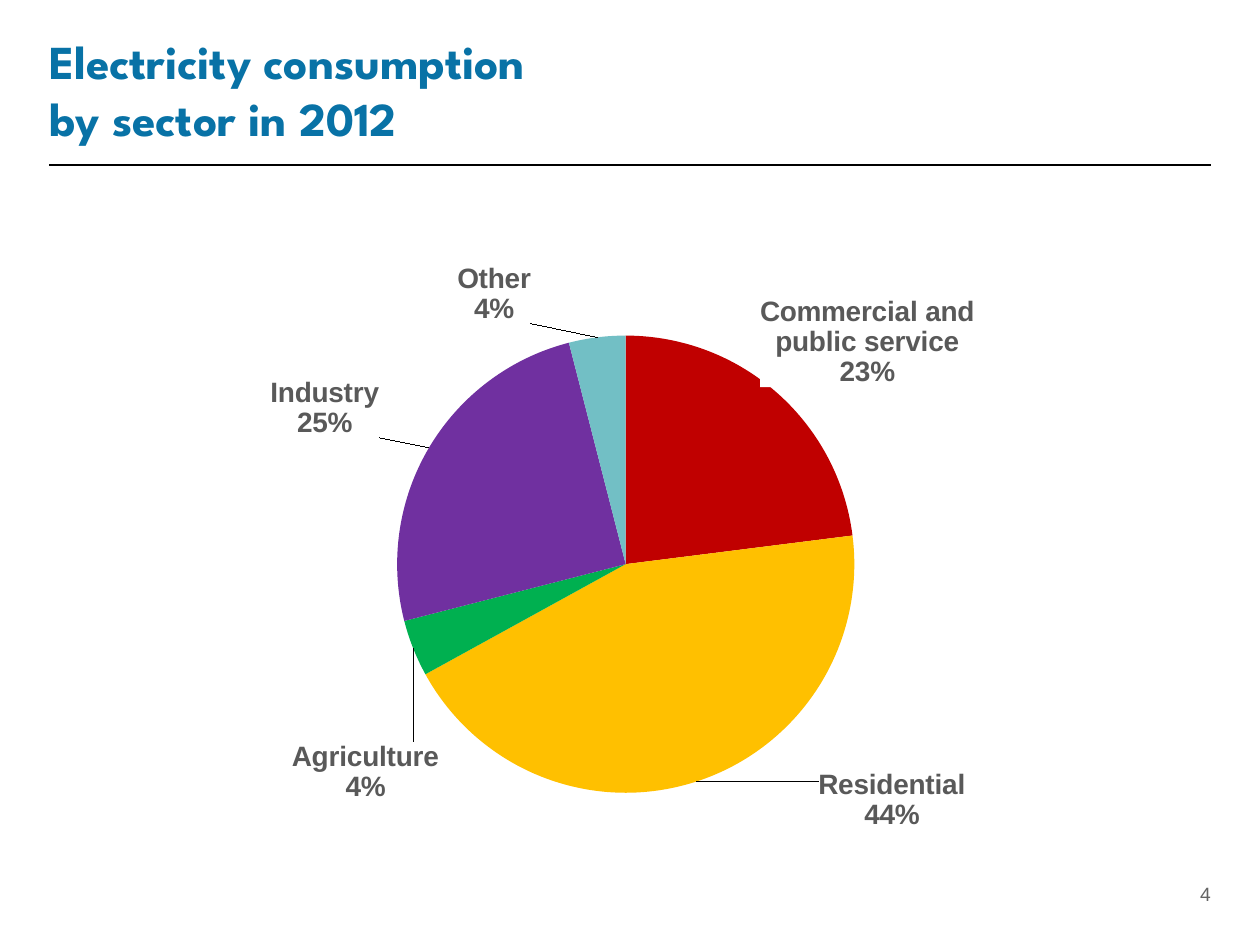
import dataclasses

import lxml.etree
import pptx
import pptx.chart.data
import pptx.dml.color
import pptx.enum.chart
import pptx.enum.shapes
import pptx.enum.text
import pptx.oxml
import pptx.oxml.ns
import pptx.util

Inches = pptx.util.Inches
qn = pptx.oxml.ns.qn


@dataclasses.dataclass(frozen=True)
class Theme:
    """Colours, fonts and type sizes of the slide."""
    width: float = 10
    height: float = 7.5
    margin: float = 0.39
    title_font: str = "League Spartan"
    body_font: str = "Arial"
    title_color: str = "0872A6"
    label_color: str = "595959"
    number_color: str = "646464"
    rule_color: str = "000000"
    paper: str = "FFFFFF"
    title_size: int = 27
    label_size: int = 16
    number_size: int = 11
    chart_size: int = 10


THEME = Theme()
CONTENT_WIDTH = THEME.width - 2 * THEME.margin

SECTORS = [
    ("Commercial and public service", 23, "C00000", (-0.02, 0)),
    ("Residential", 44, "FFC000", (0.11, -0.03)),
    ("Agriculture", 4, "00B050", (0.03, 0.14)),
    ("Industry", 25, "7030A0", (-0.04, -0.01)),
    ("Other", 4, "72BFC5", (-0.06, -0.01)),
]


def rgb(value):
    """Turn a hex string into a colour."""
    return pptx.dml.color.RGBColor.from_string(value)


def style_font(font, name, size, color, bold=False):
    """Set the face, size, colour and weight of a font."""
    font.name = name
    font.size = pptx.util.Pt(size)
    font.color.rgb = rgb(color)
    font.bold = bold


def add_text(s, box, lines, align, anchor, *font):
    """Add a text box without insets, one paragraph per line."""
    sp = s.shapes.add_textbox(*map(Inches, box))
    tf = sp.text_frame
    tf.word_wrap = True
    tf.vertical_anchor = anchor
    tf.margin_left = tf.margin_right = tf.margin_top = tf.margin_bottom = 0
    tf.text = "\n".join(lines)
    for p in tf.paragraphs:
        p.alignment = align
        for r in p.runs:
            style_font(r.font, *font)


def add_rule(s, y):
    """Draw the thin line under the title from margin to margin."""
    line = s.shapes.add_connector(
        pptx.enum.shapes.MSO_CONNECTOR.STRAIGHT, Inches(THEME.margin), Inches(y),
        Inches(THEME.width - THEME.margin), Inches(y))
    line.line.color.rgb = rgb(THEME.rule_color)
    line.line.width = pptx.util.Pt(0.75)
    lxml.etree.SubElement(line._element.spPr, qn("a:effectLst"))


def manual_layout(**values):
    """Build a chart layout element from its named values."""
    layout = lxml.etree.Element(qn("c:layout"))
    manual = lxml.etree.SubElement(layout, qn("c:manualLayout"))
    for name, value in values.items():
        lxml.etree.SubElement(manual, qn(f"c:{name}")).set("val", str(value))
    return layout


def label_slice(series, index, shift):
    """Give a slice a shifted label with its category and percentage."""
    label = series.points[index].data_label
    style_font(label.font, THEME.body_font, THEME.label_size, THEME.label_color, True)
    label.position = pptx.enum.chart.XL_LABEL_POSITION.OUTSIDE_END
    d = series._element.find(qn("c:dLbls")).findall(qn("c:dLbl"))[index]
    for name, value in (("showVal", "0"), ("showCatName", "1"), ("showPercent", "1")):
        d.find(qn(f"c:{name}")).set("val", value)
    lxml.etree.SubElement(d, qn("c:separator")).text = "\n"
    for old in d.findall(qn("c:spPr")):
        d.remove(old)
    d.find(qn("c:idx")).addnext(manual_layout(x=shift[0], y=shift[1]))
    sp_pr = lxml.etree.Element(qn("c:spPr"))
    fill = lxml.etree.SubElement(sp_pr, qn("a:solidFill"))
    lxml.etree.SubElement(fill, qn("a:srgbClr")).set("val", THEME.paper)
    d.find(qn("c:txPr")).addprevious(sp_pr)


def add_pie(s, box, sectors):
    """Add a pie from rows of name, percent, colour and label shift."""
    data = pptx.chart.data.CategoryChartData()
    data.categories = [name for name, *_ in sectors]
    data.add_series("Series 1", [share for _, share, *_ in sectors])
    chart = s.shapes.add_chart(
        pptx.enum.chart.XL_CHART_TYPE.PIE, *map(Inches, box), data).chart
    chart.has_legend = False
    chart.has_title = False
    style_font(chart.font, THEME.body_font, THEME.chart_size, THEME.rule_color)
    plot = chart.plots[0]
    plot.vary_by_categories = True
    series = plot.series[0]
    for i, (_, _, color, shift) in enumerate(sectors):
        slice_format = series.points[i].format
        slice_format.fill.solid()
        slice_format.fill.fore_color.rgb = rgb(color)
        slice_format.line.fill.background()
        label_slice(series, i, shift)
    area = chart._chartSpace.chart.plotArea
    for old in area.findall(qn("c:layout")):
        area.remove(old)
    area.insert(0, manual_layout(layoutTarget="inner", xMode="edge", yMode="edge",
                                 x=0.3, y=0.17, w=0.42, h=0.71))


def main():
    """Build the slide and save it."""
    prs = pptx.Presentation()
    prs.slide_width = Inches(THEME.width)
    prs.slide_height = Inches(THEME.height)
    s = prs.slides.add_slide(prs.slide_layouts[6])
    align, anchor = pptx.enum.text.PP_ALIGN, pptx.enum.text.MSO_ANCHOR
    add_rule(s, 1.31)
    add_text(s, (8.82, 7, 0.79, 0.34), ["4"], align.RIGHT, anchor.TOP,
             THEME.body_font, THEME.number_size, THEME.number_color)
    add_pie(s, (0.56, 1.78, 8.64, 5.14), SECTORS)
    add_text(s, (THEME.margin, 0.44, CONTENT_WIDTH, 0.53),
             ["Electricity consumption", "by sector in 2012"], align.LEFT, anchor.MIDDLE,
             THEME.title_font, THEME.title_size, THEME.title_color, True)
    prs.save("out.pptx")


if __name__ == "__main__":
    main()
